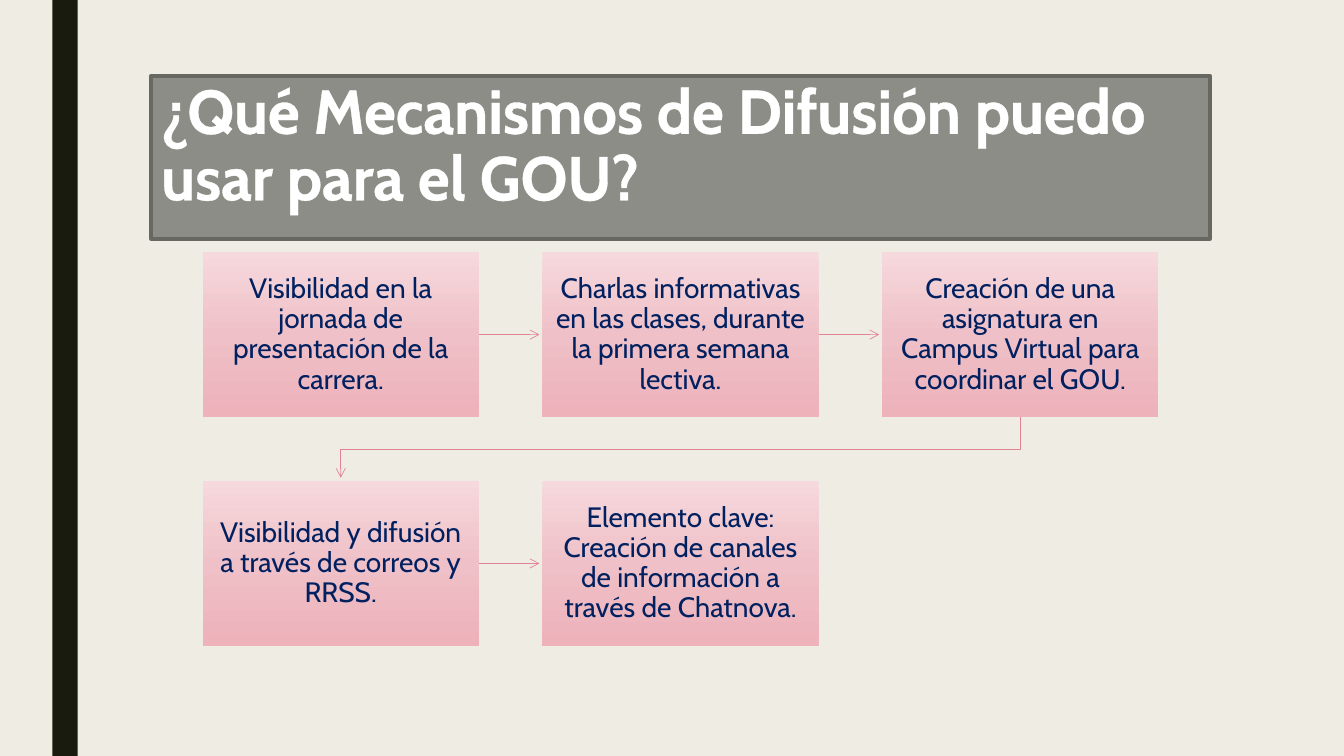
import copy

import pptx
import pptx.dml.color
import pptx.enum.shapes
import pptx.enum.text
import pptx.oxml
import pptx.oxml.ns
import pptx.util

Inches, Pt = pptx.util.Inches, pptx.util.Pt
SHAPE = pptx.enum.shapes.MSO_SHAPE
ALIGN = pptx.enum.text.PP_ALIGN
ANCHOR = pptx.enum.text.MSO_ANCHOR
qn = pptx.oxml.ns.qn

FONT = "Cabin"
COLORS = {
    "background": "EFEDE3", "stripe": "191B0E",
    "title_fill": "8C8D86", "title_line": "686863", "title_text": "FFFFFF",
    "step_text": "002060", "arrow": "E28394",
}
STEP_GRADIENT = [(0, "F6D9DD"), (0.5, "EFC0C7"), (1, "EEB2BB")]
STEPS = [
    "Visibilidad en la jornada de presentación de la carrera.",
    "Charlas informativas en las clases, durante la primera semana lectiva.",
    "Creación de una asignatura en Campus Virtual para coordinar el GOU.",
    "Visibilidad y difusión a través de correos y RRSS.",
    "Elemento clave: Creación de canales de información a través de Chatnova.",
]
COLUMNS = 3
STEP_W, STEP_H = 2.74, 1.64
PITCH_X, PITCH_Y = 3.37, 2.27
ARROW_GAP = 0.03


def rgb(name):
    return pptx.dml.color.RGBColor.from_string(COLORS.get(name, name))


def add_box(slide, left, top, width, height):
    s = slide.shapes.add_shape(SHAPE.RECTANGLE, Inches(left), Inches(top),
                               Inches(width), Inches(height))
    s.shadow.inherit = False
    s.line.fill.background()
    return s


def write_text(s, text, size, color, align, anchor, bold=False):
    tf = s.text_frame
    tf.word_wrap = True
    tf.vertical_anchor = anchor
    p = tf.paragraphs[0]
    p.text = text
    p.alignment = align
    p.line_spacing = 0.9
    r = p.runs[0]
    r.font.name, r.font.size, r.font.bold = FONT, Pt(size), bold
    r.font.color.rgb = rgb(color)
    return r


def add_stripe(slide, left, top, width, height):
    s = add_box(slide, left, top, width, height)
    s.fill.solid()
    s.fill.fore_color.rgb = rgb("stripe")


def add_title(slide, left, top, width, height):
    s = add_box(slide, left, top, width, height)
    s.fill.solid()
    s.fill.fore_color.rgb = rgb("title_fill")
    s.line.color.rgb = rgb("title_line")
    s.line.width = Pt(2.75)
    r = write_text(s, "¿Qué Mecanismos de Difusión puedo usar para el GOU?",
                   44, "title_text", ALIGN.LEFT, ANCHOR.TOP, bold=True)
    r.font._element.insert(0, pptx.oxml.parse_xml(
        f'<a:ln {pptx.oxml.ns.nsdecls("a")} w="{Pt(0.8)}"><a:solidFill>'
        f'<a:srgbClr val="{COLORS["title_text"]}"/></a:solidFill></a:ln>'))


def fill_gradient(s):
    """Fill from top to bottom with the three step colours."""
    s.fill.gradient()
    s.fill.gradient_angle = 270
    stops = s._element.spPr.find(qn("a:gradFill")).find(qn("a:gsLst"))
    stops.append(copy.deepcopy(stops[0]))
    for stop, (position, color) in zip(s.fill.gradient_stops, STEP_GRADIENT):
        stop.position = position
        stop.color.rgb = rgb(color)


def add_step(slide, left, top, text):
    s = add_box(slide, left, top, STEP_W, STEP_H)
    fill_gradient(s)
    tf = s.text_frame
    tf.margin_left = tf.margin_right = Inches(0.13)
    tf.margin_top = tf.margin_bottom = Inches(0.14)
    write_text(s, text, 20, "step_text", ALIGN.CENTER, ANCHOR.MIDDLE)


def style_arrow(s):
    s.line.color.rgb = rgb("arrow")
    s.line.width = Pt(0.5)
    tail = s.line._get_or_add_ln().makeelement(qn("a:tailEnd"), {"type": "arrow"})
    s.line._get_or_add_ln().append(tail)


def add_straight_arrow(slide, left, top):
    """Lead from the step at left, top to the next one in its row."""
    y = Inches(top + STEP_H / 2)
    s = slide.shapes.add_connector(
        pptx.enum.shapes.MSO_CONNECTOR.STRAIGHT, Inches(left + STEP_W), y,
        Inches(left + PITCH_X - ARROW_GAP), y)
    style_arrow(s)
    s._element.spPr.append(s._element.makeelement(qn("a:effectLst"), {}))


def add_return_arrow(slide, left, top, first_left):
    """Lead from the last step of a row to the first step of the next row."""
    start_x, end_x = left + STEP_W / 2, first_left + STEP_W / 2
    bottom, next_top = top + STEP_H, top + PITCH_Y
    middle = (bottom + next_top) / 2
    builder = slide.shapes.build_freeform(Inches(start_x), Inches(bottom))
    builder.add_line_segments(
        [(Inches(x), Inches(y)) for x, y in
         ((start_x, middle), (end_x, middle), (end_x, next_top - ARROW_GAP))],
        close=False)
    s = builder.convert_to_shape()
    s.shadow.inherit = False
    s.fill.background()
    style_arrow(s)


def add_process(slide, left, top):
    for i, text in enumerate(STEPS):
        row, column = divmod(i, COLUMNS)
        x, y = left + column * PITCH_X, top + row * PITCH_Y
        add_step(slide, x, y, text)
        if i == len(STEPS) - 1:
            continue
        if column == COLUMNS - 1:
            add_return_arrow(slide, x, y, left)
        else:
            add_straight_arrow(slide, x, y)


def main():
    prs = pptx.Presentation()
    prs.slide_width, prs.slide_height = Inches(13.33), Inches(7.5)
    slide = prs.slides.add_slide(prs.slide_layouts[6])
    slide.background.fill.solid()
    slide.background.fill.fore_color.rgb = rgb("background")
    add_stripe(slide, 0.52, 0, 0.25, 7.5)
    add_title(slide, 1.5, 0.75, 10.5, 1.62)
    add_process(slide, 2.01, 2.5)
    prs.save("out.pptx")


if __name__ == "__main__":
    main()
